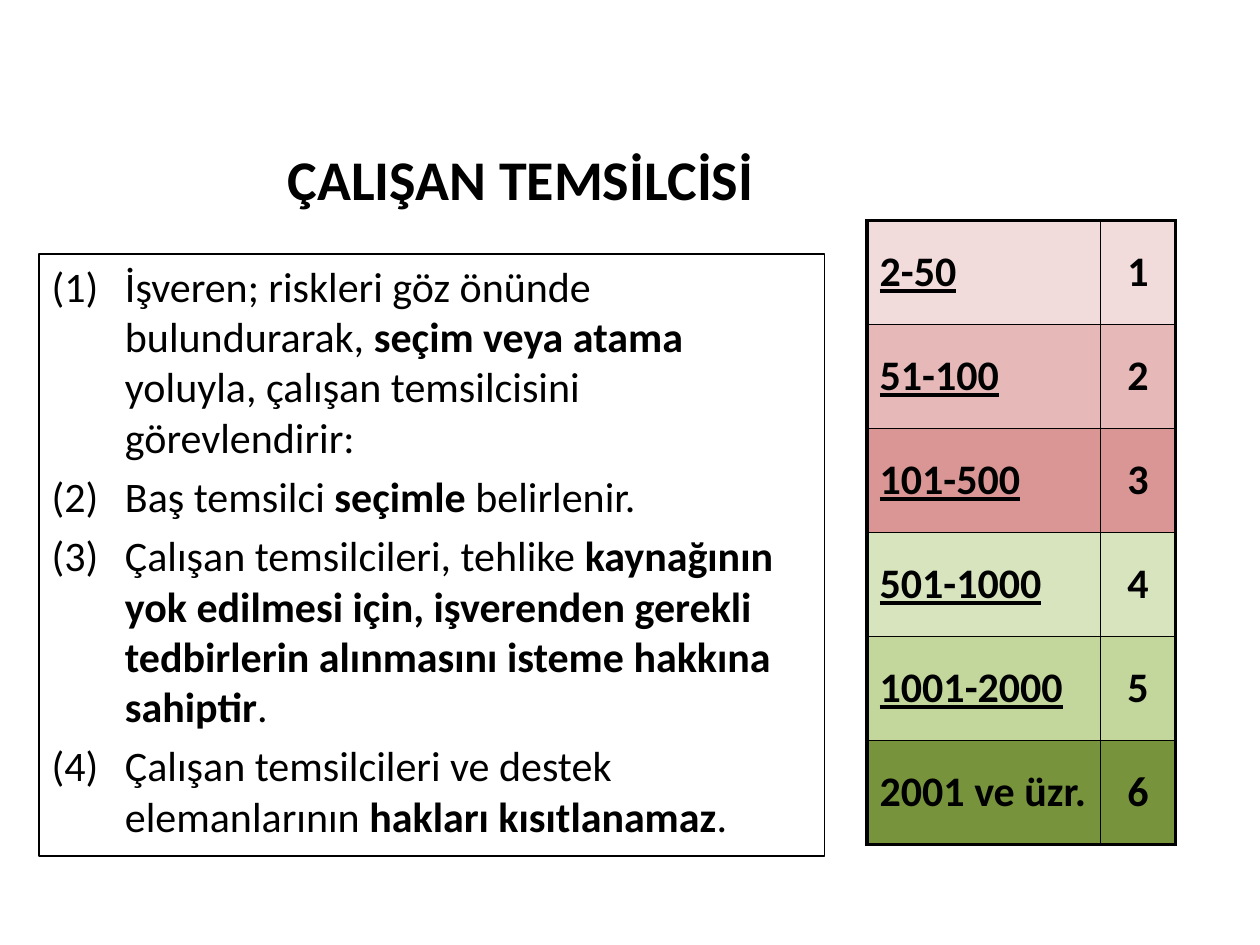
from lxml.etree import SubElement
from pptx import Presentation
from pptx.dml.color import RGBColor as Rgb
from pptx.enum.shapes import MSO_SHAPE as Shape
from pptx.enum.text import MSO_ANCHOR as Anchor, PP_ALIGN as Align
from pptx.oxml.ns import qn
from pptx.util import Cm, Pt

COLORS = {"ink": "000000", "paper": "FFFFFF"}
BODY = {"name": "Calibri", "size": Pt(24), "bold": False}
STRONG = {**BODY, "bold": True}
RANGE = {**STRONG, "underline": True}
TITLE = {**STRONG, "size": Pt(32)}
THICK, THIN = Pt(2.25), Pt(1)

# Each rule is a list of (text, format) pieces
RULES = [
    [("İşveren; riskleri göz önünde bulundurarak, ", BODY),
     ("seçim veya atama ", STRONG),
     ("yoluyla, çalışan temsilcisini görevlendirir:", BODY)],
    [("Baş temsilci ", BODY), ("seçimle ", STRONG), ("belirlenir.", BODY)],
    [("Çalışan temsilcileri, tehlike ", BODY),
     ("kaynağının yok edilmesi için, işverenden gerekli tedbirlerin "
      "alınmasını isteme hakkına sahiptir", STRONG),
     (".", BODY)],
    [("Çalışan temsilcileri ve destek elemanlarının ", BODY),
     ("hakları kısıtlanamaz", STRONG), (".", BODY)],
]

# Employee range, its format and the row colour
BANDS = [
    ("2-50", RANGE, "F2DCDB"),
    ("51-100", RANGE, "E6B9B8"),
    ("101-500", RANGE, "D99694"),
    ("501-1000", RANGE, "D7E4BD"),
    ("1001-2000", RANGE, "C3D69B"),
    ("2001 ve üzr.", STRONG, "77933C"),
]


def add_span(para, text, values):
    span = para.add_run()
    span.text = text
    for name, value in values.items():
        setattr(span.font, name, value)
    span.font.color.rgb = Rgb.from_string(COLORS["ink"])


def add_title(page, text):
    box = page.shapes.add_textbox(Cm(0.58), Cm(2.6), Cm(19.84), Cm(1.98))
    frame = box.text_frame
    frame.word_wrap = True
    frame.vertical_anchor = Anchor.MIDDLE
    para = frame.paragraphs[0]
    para.alignment = Align.CENTER
    add_span(para, text, TITLE)


def number_paragraph(para, indent):
    properties = para._p.get_or_add_pPr()
    properties.set("marL", str(indent))
    properties.set("indent", str(-indent))
    SubElement(properties, qn("a:buFont"), typeface="+mj-lt")
    SubElement(properties, qn("a:buAutoNum"), type="arabicParenBoth")


def add_rules(page, rules):
    box = page.shapes.add_shape(
        Shape.RECTANGLE, Cm(0.79), Cm(5.12), Cm(15.83), Cm(12.14))
    box.shadow.inherit = False
    box.fill.solid()
    box.fill.fore_color.rgb = Rgb.from_string(COLORS["paper"])
    box.line.color.rgb = Rgb.from_string(COLORS["ink"])
    box.line.width = Pt(0.75)
    frame = box.text_frame
    frame.word_wrap = True
    frame.vertical_anchor = Anchor.TOP
    for index, pieces in enumerate(rules):
        para = frame.add_paragraph() if index else frame.paragraphs[0]
        number_paragraph(para, Cm(1.48))
        para.alignment = Align.LEFT
        if index:
            para.space_before = Pt(5)
        for text, values in pieces:
            add_span(para, text, values)


def set_borders(cell, widths):
    properties = cell._tc.get_or_add_tcPr()
    for side, width in widths.items():
        line = SubElement(properties, qn(f"a:ln{side}"), w=str(width))
        fill = SubElement(line, qn("a:solidFill"))
        SubElement(fill, qn("a:srgbClr"), val=COLORS["ink"])


def add_bands(page, bands):
    frame = page.shapes.add_table(
        len(bands), 2, Cm(17.48), Cm(4.45), Cm(6.22), Cm(12.57))
    table = frame.table
    table.first_row = table.horz_banding = False
    for column, width in zip(table.columns, (4.7, 1.52)):
        column.width = Cm(width)
    last = len(bands) - 1
    for row, (label, values, color) in enumerate(bands):
        # The second column holds the number of representatives
        entries = [(label, values, Align.LEFT),
                   (str(row + 1), STRONG, Align.CENTER)]
        for col, (text, style, alignment) in enumerate(entries):
            cell = table.cell(row, col)
            cell.vertical_anchor = Anchor.MIDDLE
            set_borders(cell, {
                "L": THIN if col else THICK,
                "R": THICK if col else THIN,
                "T": THIN if row else THICK,
                "B": THICK if row == last else THIN,
            })
            cell.fill.solid()
            cell.fill.fore_color.rgb = Rgb.from_string(color)
            para = cell.text_frame.paragraphs[0]
            para.alignment = alignment
            add_span(para, text, style)


def main():
    deck = Presentation()
    deck.slide_width, deck.slide_height = Cm(25.4), Cm(19.05)
    page = deck.slides.add_slide(deck.slide_layouts[6])
    add_title(page, "ÇALIŞAN TEMSİLCİSİ")
    add_rules(page, RULES)
    add_bands(page, BANDS)
    deck.save("out.pptx")


if __name__ == "__main__":
    main()
